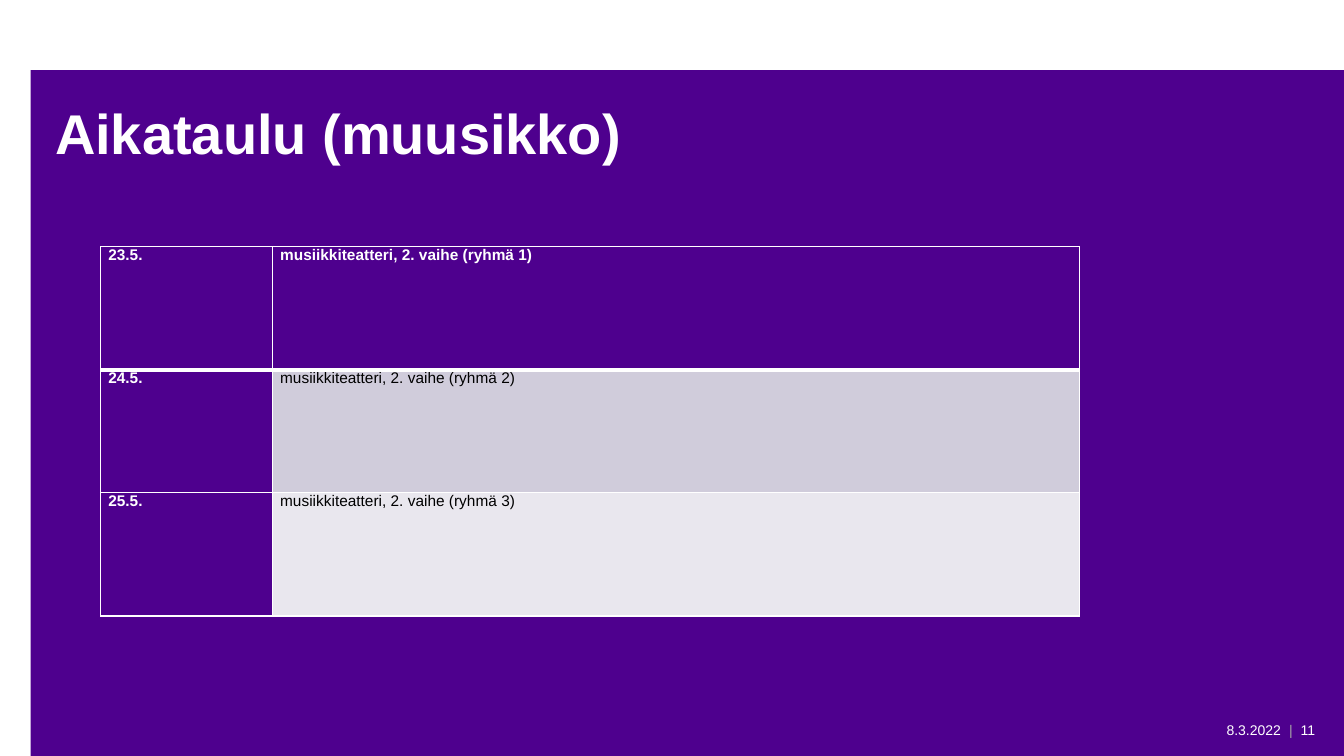
from lxml.etree import SubElement
from pptx import Presentation
from pptx.dml.color import RGBColor
from pptx.enum.shapes import MSO_SHAPE as Shape
from pptx.enum.text import MSO_ANCHOR as Anchor, PP_ALIGN as Align
from pptx.oxml.ns import qn
from pptx.util import Cm, Pt

PURPLE = RGBColor(0x4E, 0x00, 0x8E)
WHITE = RGBColor(0xFF, 0xFF, 0xFF)
BLACK = RGBColor(0x00, 0x00, 0x00)
GREY = RGBColor(0xA6, 0xA6, 0xA6)
LILAC = RGBColor(0xD0, 0xCC, 0xDB)
PALE = RGBColor(0xE9, 0xE7, 0xEE)

SCHEDULE = [
    ("23.5.", "musiikkiteatteri, 2. vaihe (ryhmä 1)"),
    ("24.5.", "musiikkiteatteri, 2. vaihe (ryhmä 2)"),
    ("25.5.", "musiikkiteatteri, 2. vaihe (ryhmä 3)"),
]
BAND_FILLS = [PURPLE, LILAC, PALE]


def add_text(para, text, size=10, color=WHITE, bold=False, spacing=None):
    span = para.add_run()
    span.text = text
    span.font.name = "Arial"
    span.font.size = Pt(size)
    span.font.bold = bold
    span.font.color.rgb = color
    if spacing:
        span.font._element.set("spc", str(spacing))


def set_margins(target, left=0, top=0, right=0, bottom=0):
    target.margin_left, target.margin_right = Cm(left), Cm(right)
    target.margin_top, target.margin_bottom = Cm(top), Cm(bottom)


class SlideBuilder:
    font_size = 11
    line_color = WHITE

    def __init__(self, page):
        self.page = page

    def panel(self, left, top, width, height, color):
        box = self.page.shapes.add_shape(
            Shape.RECTANGLE, Cm(left), Cm(top), Cm(width), Cm(height))
        box.shadow.inherit = False
        box.fill.solid()
        box.fill.fore_color.rgb = color
        box.line.fill.background()

    def text_box(self, left, top, width, height, margins, align=Align.LEFT):
        box = self.page.shapes.add_textbox(Cm(left), Cm(top), Cm(width), Cm(height))
        frame = box.text_frame
        frame.word_wrap = True
        frame.vertical_anchor = Anchor.BOTTOM
        set_margins(frame, **margins)
        para = frame.paragraphs[0]
        para.alignment = align
        return para

    def border(self, cell, edge, width):
        line = SubElement(cell._tc.get_or_add_tcPr(), qn(f"a:ln{edge}"), w=str(Pt(width)))
        fill = SubElement(line, qn("a:solidFill"))
        SubElement(fill, qn("a:srgbClr"), val=str(self.line_color))

    def schedule(self, left, top, widths, row_height, rows):
        table = self.page.shapes.add_table(
            len(rows), len(widths), Cm(left), Cm(top),
            Cm(sum(widths)), Cm(row_height * len(rows))).table
        for column, width in zip(table.columns, widths):
            column.width = Cm(width)
        for row_index, row in enumerate(rows):
            table.rows[row_index].height = Cm(row_height)
            for column_index, text in enumerate(row):
                cell = table.cell(row_index, column_index)
                heading = row_index == 0 or column_index == 0
                set_margins(cell, left=0.19, right=0.19)
                self.border(cell, "L", 1)
                self.border(cell, "R", 1)
                self.border(cell, "T", 3 if row_index == 1 else 1)
                self.border(cell, "B", 3 if row_index == 0 else 1)
                cell.fill.solid()
                cell.fill.fore_color.rgb = PURPLE if heading else BAND_FILLS[row_index]
                add_text(cell.text_frame.paragraphs[0], text, size=self.font_size,
                         color=WHITE if heading else BLACK, bold=heading)


def main():
    deck = Presentation()
    deck.slide_width, deck.slide_height = Cm(33.87), Cm(19.05)
    builder = SlideBuilder(deck.slides.add_slide(deck.slide_layouts[6]))

    builder.panel(0.77, 1.77, 33.1, 17.28, PURPLE)
    title = builder.text_box(1.14, 2.54, 29.21, 1.8,
                             dict(left=0.25, top=0.13, right=0.25, bottom=0.13))
    title.line_spacing = 0.9
    add_text(title, "Aikataulu (muusikko)", size=40, bold=True)

    builder.schedule(2.54, 6.22, [4.33, 20.34], 3.1, SCHEDULE)

    date = builder.text_box(30.15, 18.03, 2.13, 0.71,
                            dict(top=0.13, bottom=0.13), Align.RIGHT)
    add_text(date, "8.3.2022")
    number = builder.text_box(32.49, 18.03, 1.04, 0.71,
                              dict(top=0.13, right=0.25, bottom=0.13))
    add_text(number, "| ", color=GREY, spacing=140)
    add_text(number, "11")

    deck.save("out.pptx")


if __name__ == "__main__":
    main()
